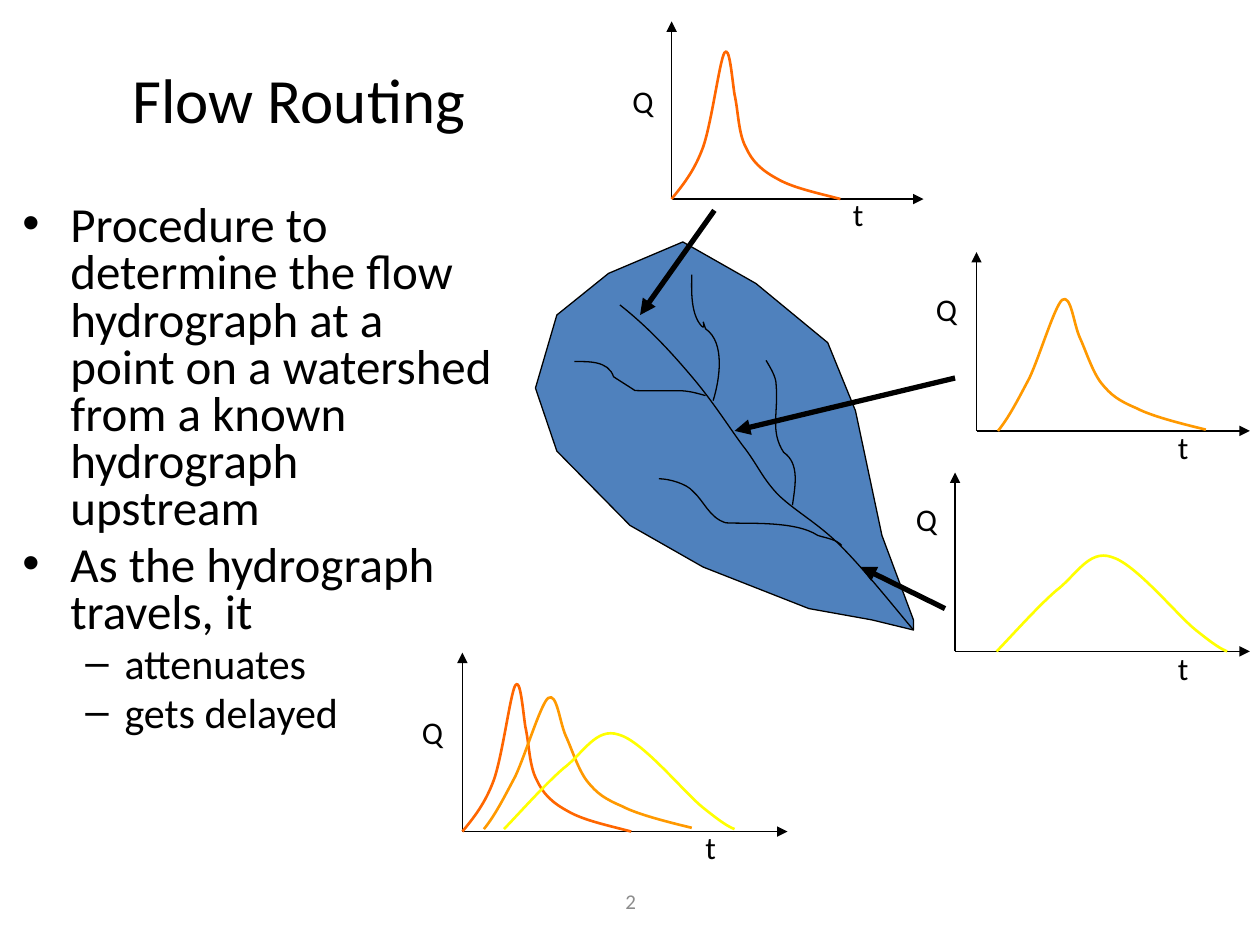
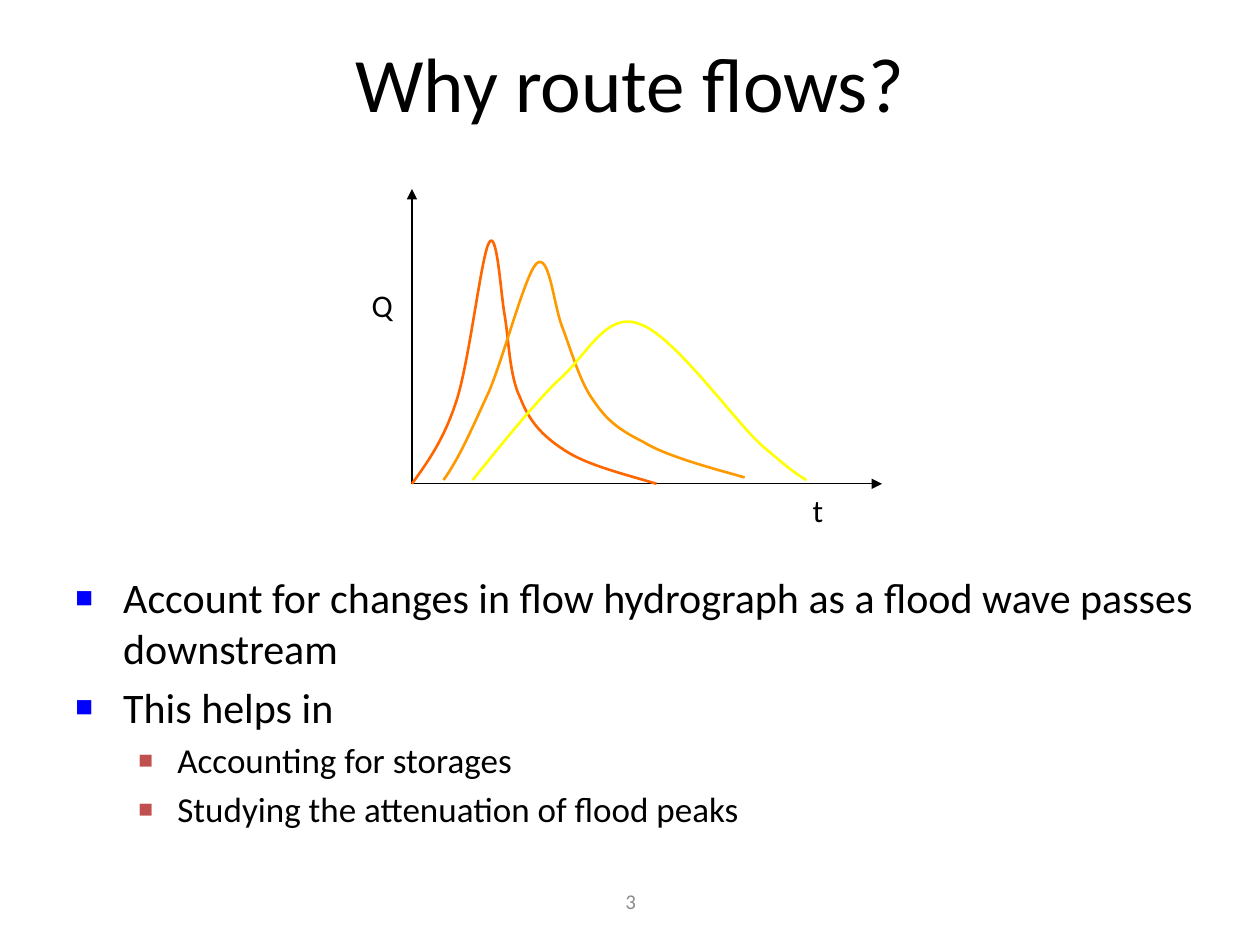
from lxml import etree
from pptx import Presentation
from pptx.dml.color import RGBColor
from pptx.enum.text import MSO_ANCHOR, PP_ALIGN
from pptx.enum.shapes import MSO_CONNECTOR
from pptx.oxml.ns import qn
from pptx.util import Pt

PX = 9144  # EMU per px, 100 px to the inch
FONT = "Calibri"
BLACK, GREY, WATER = "000000", "8C8C8C", "4F81BD"
RED, ORANGE, YELLOW = "FF6600", "FF9900", "FFFF00"
BLUE, BRICK = "0000FF", "C0504D"
STRAIGHT = MSO_CONNECTOR.STRAIGHT
CENTER, MIDDLE, TOP = PP_ALIGN.CENTER, MSO_ANCHOR.MIDDLE, MSO_ANCHOR.TOP
THIN, CURVE, BOLD = 0.75, 1.5, 3

# Hydrographs: Bezier points as (time, flow) from the start of the rise.
# "lag" is where the rise starts when all three share one plot.
HYDROGRAPHS = {
    "upstream": dict(color=RED, lag=(0, 0), points=[
        (0, 0), (9, 11), (18, 22), (25, 41), (32, 61), (38, 109), (42, 116),
        (46, 123), (48, 96), (50, 83), (53, 70), (53, 52), (59, 41),
        (64, 30), (71, 23), (84, 16), (96, 9), (115, 5), (134, 0)]),
    "middle": dict(color=ORANGE, lag=(17, 2), points=[
        (0, 0), (9, 11), (16, 25), (25, 42), (33, 59), (45, 99), (51, 104),
        (58, 109), (60, 85), (65, 74), (70, 63), (75, 47), (82, 38),
        (90, 28), (96, 24), (110, 18), (123, 11), (153, 4), (165, 1)]),
    "downstream": dict(color=YELLOW, lag=(33, 2), points=[
        (0, 0), (8, 8), (32, 35), (47, 48), (63, 60), (73, 81), (91, 75),
        (110, 70), (143, 29), (158, 17), (173, 5), (178, 2), (183, 0)]),
}
ALL = list(HYDROGRAPHS)

# origin, axis lengths (t, Q), label corners and curves of each plot
ROUTING_PLOTS = [
    dict(origin=(533, 158), axes=(200, 141), q=(492, 60), t=(667, 150),
         curves=["upstream"]),
    dict(origin=(775, 342), axes=(217, 142), q=(733, 225), t=(925, 335),
         curves=["middle"]),
    dict(origin=(758, 517), axes=(234, 142), q=(717, 392), t=(925, 510),
         curves=["downstream"]),
    dict(origin=(367, 660), axes=(258, 142), q=(325, 561), t=(550, 652),
         curves=ALL),
]
WHY_PLOT = dict(origin=(327, 384), axes=(373, 234), q=(285, 222), t=(635, 385),
                curves=ALL, stretch=(1.45, 1.65))

WATERSHED = [
    (642, 483), (558, 450), (500, 417), (442, 358), (425, 308), (442, 250),
    (483, 217), (542, 192), (600, 225), (657, 272), (679, 326), (700, 425),
    (725, 492), (725, 500), (692, 492)]
STREAMS = [
    [(725, 500), (705, 476), (685, 451), (667, 433), (649, 415), (630, 405),
     (617, 392), (604, 378), (601, 368), (589, 353), (578, 338), (566, 319),
     (550, 300), (534, 281), (515, 260), (492, 242)],
    [(668, 433), (664, 428), (655, 427), (649, 425), (631, 413), (592, 416),
     (576, 415), (563, 411), (559, 398), (550, 390), (545, 384), (531, 380),
     (523, 380)],
    [(629, 401), (631, 386), (635, 368), (622, 359), (611, 342), (618, 328),
     (616, 305), (616, 299), (611, 291), (608, 286)],
    [(560, 314), (539, 308), (544, 311), (504, 310), (498, 306), (493, 303),
     (487, 299), (483, 286), (466, 287), (456, 287)],
    [(566, 318), (571, 302), (576, 272), (560, 261), (555, 246), (563, 269),
     (554, 255), (548, 244), (549, 229), (549, 218)],
]
GAUGE_ARROWS = [((567, 167), (508, 250)), ((758, 300), (583, 342)),
                ((750, 483), (683, 450))]

# (level, text)
ROUTING_POINTS = [
    (0, "Procedure to determine the flow hydrograph at a point on a "
        "watershed from a known hydrograph upstream"),
    (0, "As the hydrograph travels, it"),
    (1, "attenuates"),
    (1, "gets delayed"),
]
WHY_POINTS = [
    (0, "Account for changes in flow hydrograph as a flood wave passes downstream"),
    (0, "This helps in"),
    (1, "Accounting for storages"),
    (1, "Studying the attenuation of flood peaks"),
]
# per level: text size, bullet character, bullet colour, bullet size in percent
ROUTING_LEVELS = [(28, "•", BLACK, 100), (24, "–", BLACK, 100)]
WHY_LEVELS = [(24, "■", BLUE, 70), (20, "■", BRICK, 70)]
INDENTS = [(38, 38), (81, 31)]  # left margin, hanging indent


def rgb(color):
    return RGBColor.from_string(color)


def emu(*lengths):
    return [length * PX for length in lengths]


def style(paragraph, size, color=BLACK):
    for run in paragraph.runs:
        run.font.name = FONT
        run.font.size = Pt(size)
        run.font.color.rgb = rgb(color)


def add_text(slide, box, text, size, color=BLACK, align=None, anchor=TOP):
    frame = slide.shapes.add_textbox(*emu(*box)).text_frame
    frame.word_wrap = True
    frame.vertical_anchor = anchor
    frame.text = text
    for paragraph in frame.paragraphs:
        paragraph.alignment = align
        style(paragraph, size, color)
    return frame


def add_bullets(slide, box, points, levels, line_spacing=None):
    frame = add_text(slide, box, "\n".join(text for _, text in points), levels[0][0])
    for paragraph, (level, _) in zip(frame.paragraphs, points):
        size, char, color, percent = levels[level]
        style(paragraph, size)
        paragraph.level = level
        paragraph.space_before = Pt(size * 0.2)
        if line_spacing:
            paragraph.line_spacing = line_spacing
        left, hanging = emu(*INDENTS[level])
        props = paragraph._p.get_or_add_pPr()
        props.set("marL", str(left))
        props.set("indent", str(-hanging))
        bullet_color = etree.SubElement(props, qn("a:buClr"))
        etree.SubElement(bullet_color, qn("a:srgbClr"), val=color)
        etree.SubElement(props, qn("a:buSzPct"), val=str(percent * 1000))
        etree.SubElement(props, qn("a:buFont"), typeface="Arial")
        etree.SubElement(props, qn("a:buChar"), char=char)
    return frame


def add_arrow(slide, start, end, width):
    arrow = slide.shapes.add_connector(STRAIGHT, *emu(*start, *end))
    arrow.line.color.rgb = rgb(BLACK)
    arrow.line.width = Pt(width)
    etree.SubElement(arrow.line._get_or_add_ln(), qn("a:tailEnd"), type="triangle")
    etree.SubElement(arrow._element.spPr, qn("a:effectLst"))


def add_outline(slide, points, color, width, fill=None):
    """Closed polygon when filled, otherwise an open polyline."""
    builder = slide.shapes.build_freeform(*points[0], scale=PX)
    builder.add_line_segments(points[1:], close=fill is not None)
    outline = builder.convert_to_shape()
    outline.shadow.inherit = False
    outline.line.color.rgb = rgb(color)
    outline.line.width = Pt(width)
    if fill:
        outline.fill.solid()
        outline.fill.fore_color.rgb = rgb(fill)
    else:
        outline.fill.background()
    return outline


def add_curve(slide, points, color, width):
    """Open outline whose segments, three by three, become Bezier curves."""
    curve = add_outline(slide, points, color, width)
    segments = list(curve._element.iter(qn("a:lnTo")))
    for i in range(0, len(segments), 3):
        bezier = etree.Element(qn("a:cubicBezTo"))
        segments[i].addprevious(bezier)
        for segment in segments[i:i + 3]:
            bezier.append(segment[0])
            segment.getparent().remove(segment)


def add_plot(slide, origin, axes, q, t, curves, stretch=(1, 1)):
    x0, y0 = origin
    t_length, q_length = axes
    stretch_t, stretch_q = stretch
    add_arrow(slide, origin, (x0, y0 - q_length), THIN)
    add_arrow(slide, origin, (x0 + t_length, y0), THIN)
    for label, corner in (("Q", q), ("t", t)):
        add_text(slide, (*corner, round(33 * stretch_t), 40), label, 18)
    for name in curves:
        hydrograph = HYDROGRAPHS[name]
        lag_t, lag_q = hydrograph["lag"]
        if len(curves) == 1:
            lag_q = 0
        points = [(round(x0 + (lag_t + time) * stretch_t),
                   round(y0 - (lag_q + flow) * stretch_q))
                  for time, flow in hydrograph["points"]]
        add_curve(slide, points, hydrograph["color"], CURVE)


def add_slide(deck, number, title, title_box, title_size):
    slide = deck.slides.add_slide(deck.slide_layouts[6])
    add_text(slide, (342, 695, 317, 40), str(number), 12, GREY, CENTER, MIDDLE)
    add_text(slide, title_box, title, title_size, BLACK, CENTER, MIDDLE)
    return slide


def main():
    deck = Presentation()
    deck.slide_width, deck.slide_height = emu(1000, 750)

    routing = add_slide(deck, 2, "Flow Routing", (8, 47, 458, 62), 36)
    add_bullets(routing, (8, 158, 392, 475), ROUTING_POINTS, ROUTING_LEVELS, 0.8)
    for plot in ROUTING_PLOTS:
        add_plot(routing, **plot)
    add_outline(routing, WATERSHED, BLACK, THIN, WATER)
    for stream in STREAMS:
        add_curve(routing, stream, BLACK, THIN)
    for start, end in GAUGE_ARROWS:
        add_arrow(routing, start, end, BOLD)

    why = add_slide(deck, 3, "Why route flows?", (50, 17, 900, 95), 44)
    frame = add_bullets(why, (50, 408, 917, 300), WHY_POINTS, WHY_LEVELS)
    frame.margin_top = 46 * PX
    add_plot(why, **WHY_PLOT)

    deck.save("out.pptx")


if __name__ == "__main__":
    main()
